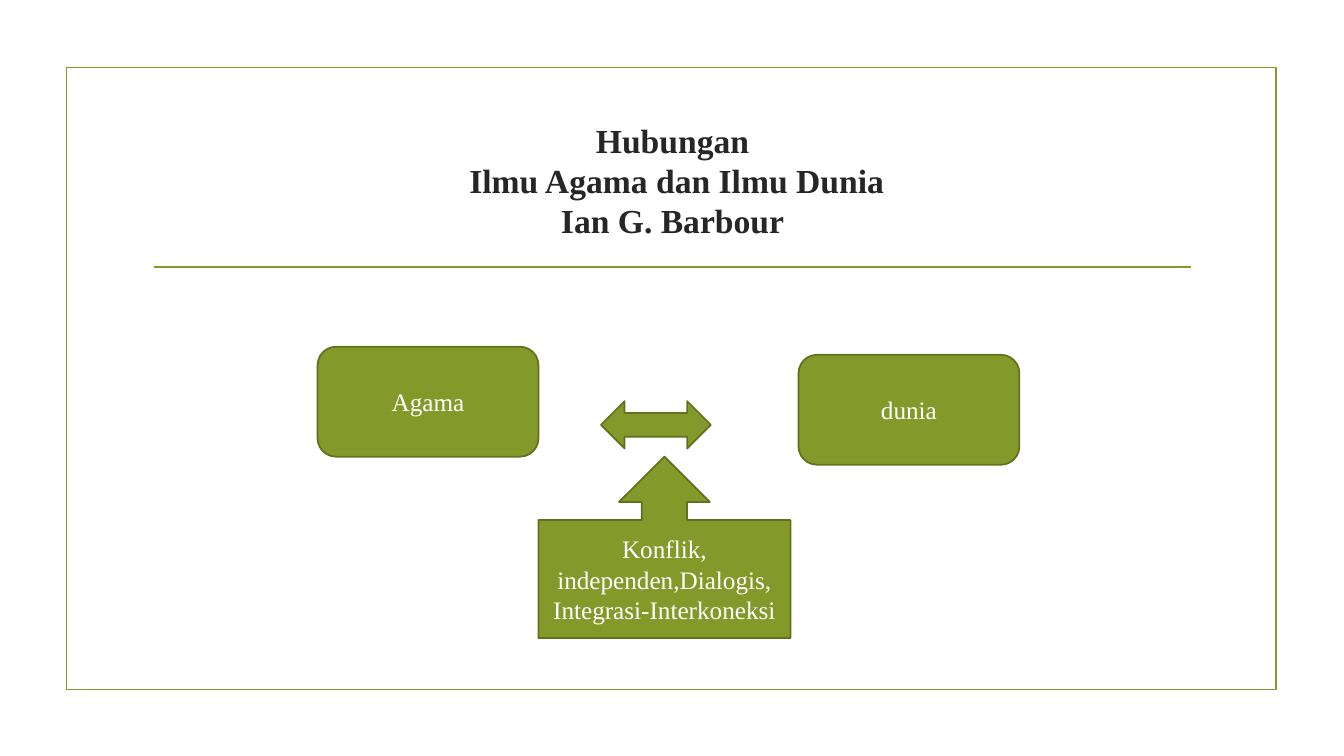
from dataclasses import dataclass

import pptx
import pptx.dml.color
import pptx.enum.shapes
import pptx.enum.text
import pptx.oxml
import pptx.oxml.ns
import pptx.shapes.autoshape
import pptx.slide
import pptx.text.text
import pptx.util

Inches = pptx.util.Inches
Kind = pptx.enum.shapes.MSO_SHAPE

COLOURS = {
    "olive": "83992A",
    "outline": "61711F",
    "title": "262626",
    "label": "FFFFFF",
}
FONT = "Times New Roman"
LINE_WIDTH = pptx.util.Pt(1.25)


@dataclass(frozen=True)
class Block:
    kind: pptx.enum.shapes.MSO_SHAPE
    left: float
    top: float
    width: float
    height: float
    label: str = ""
    filled: bool = True


FRAME = Block(Kind.RECTANGLE, 0.66, 0.67, 12, 6.17, filled=False)
BLOCKS = [
    Block(Kind.ROUNDED_RECTANGLE, 3.15, 3.44, 2.19, 1.09, "Agama"),
    Block(Kind.LEFT_RIGHT_ARROW, 5.96, 3.98, 1.09, 0.47),
    Block(Kind.ROUNDED_RECTANGLE, 7.92, 3.52, 2.19, 1.09, "dunia"),
    Block(Kind.UP_ARROW_CALLOUT, 5.34, 4.53, 2.5, 1.8,
          "Konflik, independen,Dialogis, Integrasi-Interkoneksi"),
]
TITLE_LINES = ["Hubungan", " Ilmu Agama dan Ilmu Dunia", "Ian G. Barbour"]


def colour(name: str) -> pptx.dml.color.RGBColor:
    return pptx.dml.color.RGBColor.from_string(COLOURS[name])


def centre_text(frame: pptx.text.text.TextFrame) -> None:
    frame.word_wrap = True
    frame.auto_size = pptx.enum.text.MSO_AUTO_SIZE.NONE
    frame.vertical_anchor = pptx.enum.text.MSO_ANCHOR.MIDDLE
    frame.paragraphs[0].alignment = pptx.enum.text.PP_ALIGN.CENTER


def add_span(para, text: str, size: int, colour_name: str, bold: bool = False) -> None:
    span = para.add_run()
    span.text = text
    span.font.name = FONT
    span.font.size = pptx.util.Pt(size)
    span.font.bold = bold
    span.font.color.rgb = colour(colour_name)


def add_block(page: pptx.slide.Slide, block: Block) -> None:
    shape = page.shapes.add_shape(
        block.kind, Inches(block.left), Inches(block.top),
        Inches(block.width), Inches(block.height))
    shape.shadow.inherit = False
    shape.line.width = LINE_WIDTH
    if block.filled:
        shape.fill.solid()
        shape.fill.fore_color.rgb = colour("olive")
        shape.line.color.rgb = colour("outline")
    else:
        shape.fill.background()
        shape.line.color.rgb = colour("olive")
    if block.label:
        centre_text(shape.text_frame)
        add_span(shape.text_frame.paragraphs[0], block.label, 18, "label")


def add_rule(page: pptx.slide.Slide) -> None:
    rule = page.shapes.add_connector(
        pptx.enum.shapes.MSO_CONNECTOR.STRAIGHT,
        Inches(1.53), Inches(2.65), Inches(11.81), Inches(2.65))
    rule.line.color.rgb = colour("olive")
    rule.line.width = LINE_WIDTH
    properties = rule._element.find(pptx.oxml.ns.qn("p:spPr"))
    properties.append(pptx.oxml.parse_xml(
        f"<a:effectLst {pptx.oxml.ns.nsdecls('a')}/>"))


def set_title(page: pptx.slide.Slide) -> None:
    title = page.shapes.title
    title.left, title.top = Inches(1.42), Inches(1.07)
    title.width, title.height = Inches(10.5), Inches(1.43)
    centre_text(title.text_frame)
    para = title.text_frame.paragraphs[0]
    for index, line in enumerate(TITLE_LINES):
        if index:
            para.add_line_break()
        add_span(para, line, 24, "title", bold=True)


def main() -> None:
    deck = pptx.Presentation()
    deck.slide_width, deck.slide_height = Inches(13.33), Inches(7.5)
    page = deck.slides.add_slide(deck.slide_layouts.get_by_name("Title Only"))
    add_block(page, FRAME)
    add_rule(page)
    set_title(page)
    for block in BLOCKS:
        add_block(page, block)
    deck.save("out.pptx")


if __name__ == "__main__":
    main()
